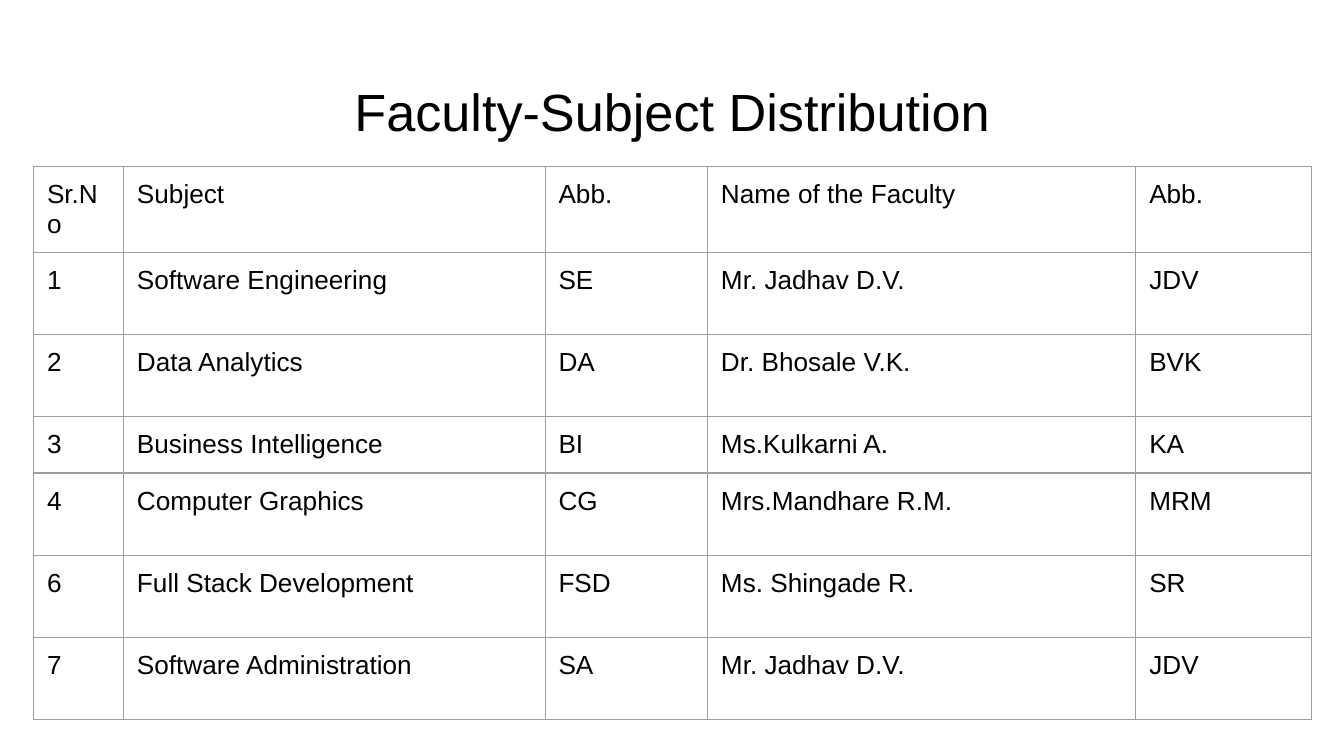
from dataclasses import dataclass

from lxml import etree
from pptx import Presentation
from pptx.dml.color import RGBColor
from pptx.enum.text import MSO_ANCHOR, MSO_AUTO_SIZE, PP_ALIGN
from pptx.oxml.ns import qn
from pptx.util import Inches, Pt

LEFT, CENTER = PP_ALIGN.LEFT, PP_ALIGN.CENTER
TOP = MSO_ANCHOR.TOP
NO_AUTOFIT = MSO_AUTO_SIZE.NONE
TITLE_ONLY = 5


@dataclass(frozen=True)
class Theme:
    font: str = "Arial"
    ink: str = "000000"
    rule: str = "9E9E9E"
    rule_width: float = 0.75
    title_size: int = 28
    body_size: int = 14
    inset: float = 0.1


THEME = Theme()
SLIDE_WIDTH = Inches(10)
SLIDE_HEIGHT = SLIDE_WIDTH * 9 // 16
TITLE_BOX = (0.34, 0.49, 9.32, 0.63)
FACULTY_BOX = (0.25, 1.24, 9.51, 4.07)
COLUMN_SHARES = (0.67, 3.14, 1.21, 3.19, 1.31)
TALL_ROW, SHORT_ROW = 0.61, 0.4
SHORT_SUBJECT = "Business Intelligence"

HEADINGS = ("Sr.No", "Subject", "Abb.", "Name of the Faculty", "Abb.")
ASSIGNMENTS = (
    ("1", "Software Engineering", "SE", "Mr. Jadhav D.V.", "JDV"),
    ("2", "Data Analytics", "DA", "Dr. Bhosale V.K.", "BVK"),
    ("3", SHORT_SUBJECT, "BI", "Ms.Kulkarni A.", "KA"),
    ("4", "Computer Graphics", "CG", "Mrs.Mandhare R.M.", "MRM"),
    ("6", "Full Stack Development", "FSD", "Ms. Shingade R.", "SR"),
    ("7", "Software Administration", "SA", "Mr. Jadhav D.V.", "JDV"),
)


def write_text(frame, text, size=THEME.body_size, align=LEFT):
    frame.word_wrap = True
    paragraph = frame.paragraphs[0]
    paragraph.alignment = align
    run = paragraph.add_run()
    run.text = text
    run.font.size = Pt(size)
    run.font.name = THEME.font
    run.font.color.rgb = RGBColor.from_string(THEME.ink)


def set_insets(holder):
    holder.margin_left = holder.margin_right = Inches(THEME.inset)
    holder.margin_top = holder.margin_bottom = Inches(THEME.inset)


def rule_cell(cell):
    properties = cell._tc.get_or_add_tcPr()
    for position, side in enumerate(("lnL", "lnR", "lnT", "lnB")):
        line = etree.Element(qn(f"a:{side}"), w=str(Pt(THEME.rule_width)))
        fill = etree.SubElement(line, qn("a:solidFill"))
        etree.SubElement(fill, qn("a:srgbClr"), val=THEME.rule)
        properties.insert(position, line)


def place_title(slide, box):
    title = slide.shapes.title
    title.left, title.top, title.width, title.height = map(Inches, box)
    frame = title.text_frame
    frame.auto_size = NO_AUTOFIT
    frame.vertical_anchor = TOP
    set_insets(frame)
    write_text(frame, "Faculty-Subject Distribution", size=THEME.title_size, align=CENTER)


def place_faculty_table(slide, box):
    records = (HEADINGS, *ASSIGNMENTS)
    row_shares = [SHORT_ROW if record[1] == SHORT_SUBJECT else TALL_ROW for record in records]
    left, top, width, height = map(Inches, box)
    table = slide.shapes.add_table(
        len(records), len(HEADINGS), left, top, width, height
    ).table
    table.first_row = table.horz_banding = False
    for column, share in zip(table.columns, COLUMN_SHARES):
        column.width = round(width * share / sum(COLUMN_SHARES))
    for row, share, record in zip(table.rows, row_shares, records):
        row.height = round(height * share / sum(row_shares))
        for cell, text in zip(row.cells, record):
            cell.fill.background()
            cell.vertical_anchor = TOP
            set_insets(cell)
            rule_cell(cell)
            write_text(cell.text_frame, text)


def main():
    deck = Presentation()
    deck.slide_width, deck.slide_height = SLIDE_WIDTH, SLIDE_HEIGHT
    slide = deck.slides.add_slide(deck.slide_layouts[TITLE_ONLY])
    place_title(slide, TITLE_BOX)
    place_faculty_table(slide, FACULTY_BOX)
    deck.save("out.pptx")


if __name__ == "__main__":
    main()
